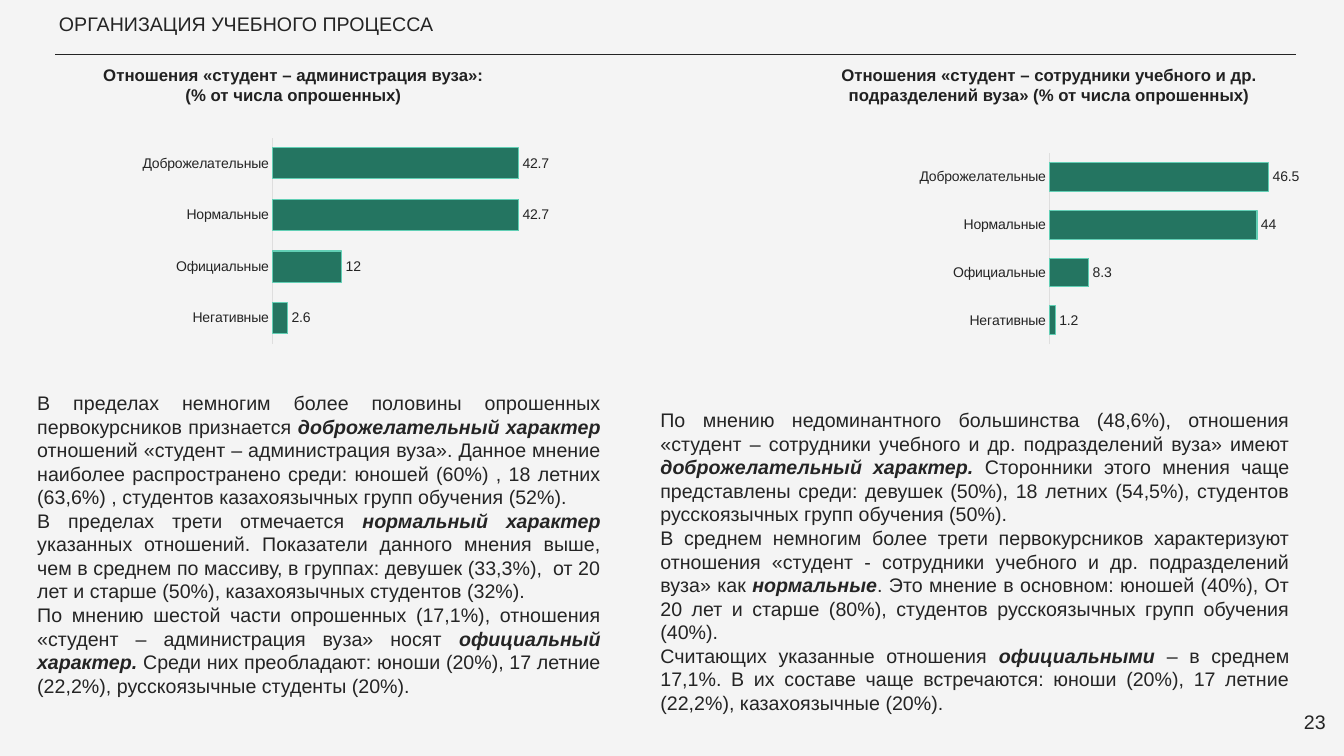
from lxml.etree import SubElement
from pptx import Presentation
from pptx.chart.data import CategoryChartData as ChartData
from pptx.dml.color import RGBColor
from pptx.enum.chart import XL_CHART_TYPE as ChartType
from pptx.enum.chart import XL_LABEL_POSITION as LabelPosition
from pptx.enum.chart import XL_TICK_MARK as TickMark
from pptx.enum.shapes import MSO_CONNECTOR as Connector
from pptx.enum.text import PP_ALIGN as Align
from pptx.oxml import parse_xml
from pptx.oxml.ns import nsdecls, qn
from pptx.util import Inches, Pt

COLORS = {
    "background": "F4F4F4",
    "text": "242424",
    "heading": "212121",
    "bar": "247561",
    "bar_edge": "62CFB5",
    "axis": "DEDEDE",
}
CATEGORIES = ["Негативные", "Официальные", "Нормальные", "Доброжелательные"]

ADMINISTRATION_TEXT = [
    ["В пределах немногим более половины опрошенных первокурсников признается ",
     "доброжелательный характер",
     " отношений «студент – администрация вуза». Данное мнение наиболее распространено "
     "среди: юношей (60%) , 18 летних (63,6%) , студентов казахоязычных групп обучения (52%)."],
    ["В пределах трети отмечается ",
     "нормальный характер",
     " указанных отношений. Показатели данного мнения выше, чем в среднем по массиву, "
     "в группах: девушек (33,3%),  от 20 лет и старше (50%), казахоязычных студентов (32%)."],
    ["По мнению шестой части опрошенных (17,1%), отношения «студент – администрация вуза» носят ",
     "официальный характер. ",
     "Среди них преобладают: юноши (20%), 17 летние (22,2%), русскоязычные студенты (20%)."],
]
STAFF_TEXT = [
    ["По мнению недоминантного большинства (48,6%), отношения «студент – сотрудники учебного "
     "и др. подразделений вуза» имеют ",
     "доброжелательный характер. ",
     "Сторонники этого мнения чаще представлены среди: девушек (50%), 18 летних (54,5%), "
     "студентов русскоязычных групп обучения (50%)."],
    ["В среднем немногим более трети первокурсников характеризуют отношения «студент - "
     "сотрудники учебного и др. подразделений вуза» как ",
     "нормальные",
     ". Это мнение в основном: юношей (40%), От 20 лет и старше (80%), студентов "
     "русскоязычных групп обучения (40%)."],
    ["Считающих указанные отношения ",
     "официальными",
     " – в среднем 17,1%. В их составе чаще встречаются: юноши (20%), 17 летние (22,2%), "
     "казахоязычные (20%)."],
]


class Page:
    font = "Arial"
    grid = 100

    def __init__(self, deck):
        self.column = deck.slide_width / self.grid
        self.row = deck.slide_height / self.grid
        self.slide = deck.slides.add_slide(deck.slide_layouts[6])
        self.paint(self.slide.background.fill, "background")

    def paint(self, fill, color):
        fill.solid()
        fill.fore_color.rgb = RGBColor.from_string(COLORS[color])

    def outline(self, line, color):
        self.paint(line.fill, color)
        line.width = Pt(0.75)

    def place(self, left, top, width, height):
        return (round(left * self.column), round(top * self.row),
                round(width * self.column), round(height * self.row))

    def style(self, font, size, color="text"):
        font.name = self.font
        font.size = Pt(size)
        font.color.rgb = RGBColor.from_string(COLORS[color])

    def rule(self, left, top, right):
        start, level, end, _ = self.place(left, top, right, 0)
        line = self.slide.shapes.add_connector(Connector.STRAIGHT, start, level, end, level)
        self.outline(line.line, "text")
        SubElement(line._element.spPr, qn("a:effectLst"))

    def text(self, area, paragraphs, align=Align.LEFT, size=14, color="text", bold=False, inset=0.13):
        box = self.slide.shapes.add_textbox(*self.place(*area))
        frame = box.text_frame
        frame.word_wrap = True
        frame.margin_left = frame.margin_right = Inches(inset)
        frame.margin_top = frame.margin_bottom = Inches(inset)
        for number, spans in enumerate(paragraphs):
            para = frame.add_paragraph() if number else frame.paragraphs[0]
            para.alignment = align
            for index, words in enumerate(spans):
                span = para.add_run()
                span.text = words
                self.style(span.font, size, color)
                emphasis = index % 2 == 1
                span.font.bold = bold or emphasis
                span.font.italic = emphasis

    def heading(self, area, lines):
        self.text(area, [[line] for line in lines], Align.CENTER, 12, "heading", True, 0.1)

    def bars(self, area, values, maximum, plot_top, plot_height):
        data = ChartData()
        data.categories = CATEGORIES
        data.add_series("Series 1", values)
        frame = self.slide.shapes.add_chart(ChartType.BAR_CLUSTERED, *self.place(*area), data)
        chart = frame.chart
        chart.has_title = chart.has_legend = False
        self.style(chart.font, 10)

        axis = chart.category_axis
        axis.major_tick_mark = axis.minor_tick_mark = TickMark.NONE
        axis.has_major_gridlines = False
        self.style(axis.tick_labels.font, 10)
        self.outline(axis.format.line, "axis")
        scale = chart.value_axis
        scale.visible = scale.has_major_gridlines = False
        scale.minimum_scale, scale.maximum_scale = 0, maximum

        plot = chart.plots[0]
        plot.gap_width = 66
        plot.vary_by_categories = False
        series = plot.series[0]
        self.paint(series.format.fill, "bar")
        self.outline(series.format.line, "bar_edge")
        labels = series.data_labels
        labels.show_value = True
        labels.position = LabelPosition.OUTSIDE_END
        self.style(labels.font, 10)
        self.fix_plot(chart, plot_top, plot_height)

    def fix_plot(self, chart, top, height):
        plot_area = chart._chartSpace.chart.plotArea
        for old in plot_area.findall(qn("c:layout")):
            plot_area.remove(old)
        settings = {"layoutTarget": "inner", "xMode": "edge", "yMode": "edge",
                    "x": 0.466, "y": top, "w": 0.486, "h": height}
        parts = "".join(f'<c:{name} val="{value}"/>' for name, value in settings.items())
        plot_area.insert(0, parse_xml(
            f'<c:layout {nsdecls("c")}><c:manualLayout>{parts}</c:manualLayout></c:layout>'))


def main():
    deck = Presentation()
    deck.slide_width, deck.slide_height = Inches(13.33), Inches(7.5)
    page = Page(deck)
    page.rule(4.13, 7.2, 96.4)
    page.text((3.41, 0, 44.5, 6.67), [["ОРГАНИЗАЦИЯ УЧЕБНОГО ПРОЦЕССА"]])
    page.text((93.62, 92.4, 6, 7.6), [["23"]], Align.RIGHT)

    page.heading((2.18, 7.2, 39.31, 8.13),
                 ["Отношения «студент – администрация вуза»:", "(% от числа опрошенных)"])
    page.bars((1.8, 17.73, 39.68, 28), [2.6, 12, 42.7, 42.7], 45, 0.017, 0.975)
    page.text((1.8, 50, 43.89, 42.4), ADMINISTRATION_TEXT, Align.JUSTIFY)

    page.heading((60.02, 7.2, 36.08, 8.13),
                 ["Отношения «студент – сотрудники учебного и др. подразделений вуза» "
                  "(% от числа опрошенных)"])
    page.bars((61.29, 17.73, 36.08, 28), [1.2, 8.3, 44, 46.5], 50, 0.09, 0.903)
    page.text((48.16, 52.27, 48.76, 42.4), STAFF_TEXT, Align.JUSTIFY)
    deck.save("out.pptx")


if __name__ == "__main__":
    main()
